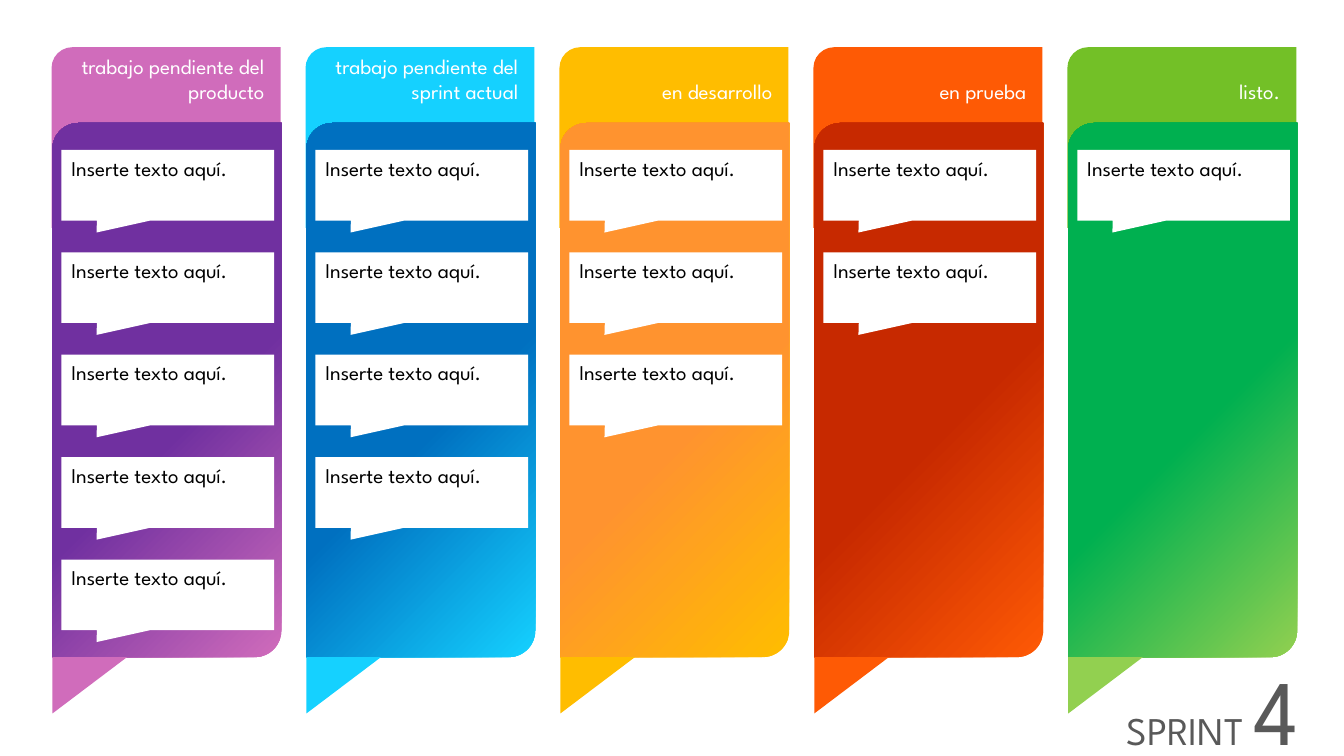
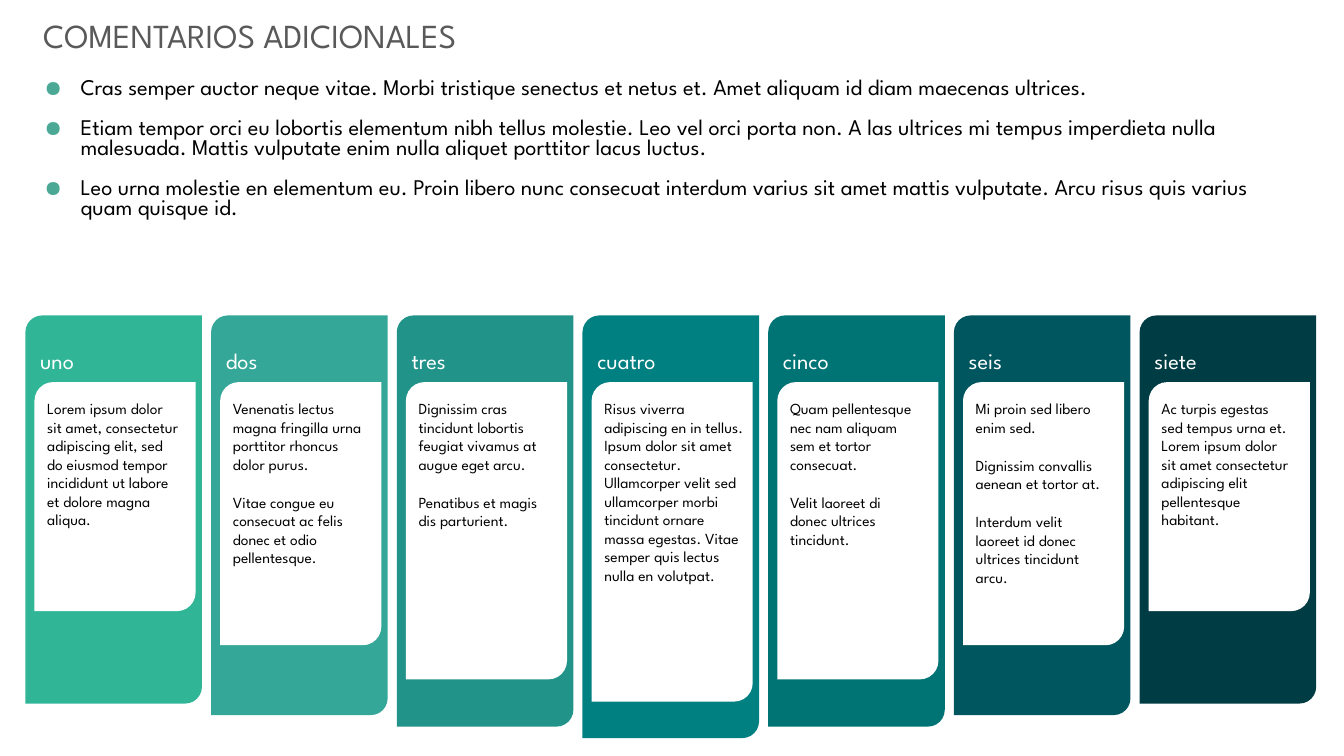
from dataclasses import dataclass

import pptx
import pptx.dml.color
import pptx.enum.shapes
import pptx.enum.text
import pptx.oxml.ns
import pptx.util
from lxml import etree

Cm = pptx.util.Cm
Pt = pptx.util.Pt
RGB = pptx.dml.color.RGBColor.from_string
MSO = pptx.enum.shapes.MSO_SHAPE
ALIGN = pptx.enum.text.PP_ALIGN
ANCHOR = pptx.enum.text.MSO_ANCHOR
qn = pptx.oxml.ns.qn


@dataclass(frozen=True)
class Theme:
    font: str = "League Spartan"
    white: str = "FFFFFF"
    black: str = "000000"
    grey: str = "595959"
    bullet: str = "4BA895"
    teals: tuple = ("30B697", "34A798", "229389", "008081",
                    "007475", "00565E", "003C43")
    note: float = 11
    label: float = 15
    body: float = 16
    title: float = 24
    sprint: float = 28
    number: float = 66
    leading: float = 1.2
    tight: float = 0.9
    para_gap: float = 14


INSETS = (0.25, 0.13, 0.25, 0.13)
HEADER_INSETS = (0.25, 0, 0.25, 0.13)


class Deck:
    def __init__(self, theme):
        self.theme = theme
        self.prs = pptx.Presentation()
        self.prs.slide_width = Cm(33.87)
        self.prs.slide_height = Cm(19.05)
        self.slide = None

    def new_slide(self):
        self.slide = self.prs.slides.add_slide(self.prs.slide_layouts[6])

    def shape(self, kind, box, fill, adj=(), rotation=0):
        """Draw a borderless shape; fill is a colour or (start, end, end position)."""
        sp = self.slide.shapes.add_shape(kind, *map(Cm, box))
        sp.shadow.inherit = False
        sp.line.fill.background()
        sp.rotation = rotation
        for i, value in enumerate(adj):
            sp.adjustments[i] = value
        if isinstance(fill, str):
            sp.fill.solid()
            sp.fill.fore_color.rgb = RGB(fill)
        else:
            start, end, position = fill
            sp.fill.gradient()
            sp.fill.gradient_angle = 135
            for stop, colour, pos in zip(sp.fill.gradient_stops, (start, end), (0, position)):
                stop.color.rgb = RGB(colour)
                stop.position = pos
        return sp

    def panel(self, box, fill, corner=0.115):
        return self.shape(MSO.ROUND_2_DIAG_RECTANGLE, box, fill, (corner, 0))

    def textbox(self, box, paragraphs, **style):
        sp = self.slide.shapes.add_textbox(*map(Cm, box))
        self.set_text(sp.text_frame, paragraphs, **style)

    def set_text(self, tf, paragraphs, colour, align=ALIGN.LEFT, anchor=ANCHOR.TOP,
                 insets=INSETS, gap=0, leading=None, blank_lines=0):
        """Fill a frame; each paragraph is a list of (text, size) runs.

        blank_lines lowers the first line by that many lines.
        """
        leading = leading or self.theme.leading
        tf.word_wrap = True
        tf.vertical_anchor = anchor
        left, top, right, bottom = map(Cm, insets)
        tf.margin_left, tf.margin_right, tf.margin_bottom = left, right, bottom
        tf.margin_top = top + Pt(blank_lines * paragraphs[0][0][1] * leading)
        for i, runs in enumerate(paragraphs):
            p = tf.paragraphs[0] if i == 0 else tf.add_paragraph()
            self.set_paragraph(p, runs, colour, align, gap, leading)

    def set_paragraph(self, p, runs, colour, align, gap, leading):
        p.alignment = align
        p.line_spacing = Pt(max(size for _, size in runs) * leading)
        p.space_after = Pt(gap)
        for text, size in runs:
            r = p.add_run()
            r.text = text
            r.font.name = self.theme.font
            r.font.size = Pt(size)
            r.font.color.rgb = RGB(colour)

    def bullet(self, p):
        pPr = p._p.get_or_add_pPr()
        pPr.set("marL", str(Cm(1.27)))
        pPr.set("indent", str(Cm(-0.91)))
        colour = etree.SubElement(pPr, qn("a:buClr"))
        etree.SubElement(colour, qn("a:srgbClr")).set("val", self.theme.bullet)
        etree.SubElement(pPr, qn("a:buChar")).set("char", "●")

    def bullet_table(self, box, items):
        """Add a one-cell table holding a bulleted list."""
        t = self.theme
        table = self.slide.shapes.add_table(1, 1, *map(Cm, box)).table
        table.first_row = table.horz_banding = False
        cell = table.cell(0, 0)
        cell.fill.background()
        cell.margin_left = cell.margin_right = Cm(0.76)
        cell.margin_top = cell.margin_bottom = Cm(0.51)
        tf = cell.text_frame
        for i, item in enumerate(items):
            p = tf.paragraphs[0] if i == 0 else tf.add_paragraph()
            self.set_paragraph(p, [(item, t.body)], t.black, ALIGN.LEFT, t.para_gap, t.tight)
            self.bullet(p)

    def callout(self, left, top):
        sp = self.shape(MSO.RECTANGULAR_CALLOUT, (left, top, 5.36, 1.78),
                        self.theme.white, (-0.335, 0.669))
        self.set_text(sp.text_frame, [[("Inserte texto aquí.", self.theme.label)]],
                      self.theme.black)

    def board_column(self, left, header, blank_lines, colours, cards):
        t = self.theme
        head, tail, body = colours
        sp = self.panel((left, 1.19, 5.77, 4.55), head)
        self.set_text(sp.text_frame, [[(header, t.label)]], t.white, ALIGN.RIGHT,
                      insets=HEADER_INSETS, blank_lines=blank_lines)
        self.panel((left + 0.02, 3.1, 5.77, 13.46), (tail, body, 0.43))
        self.shape(MSO.RIGHT_TRIANGLE, (left + 0.25, 16.33, 1.42, 1.88), tail, rotation=90)
        for row in range(cards):
            self.callout(left + 0.25, 3.78 + 2.58 * row)

    def comment_column(self, left, name, fill, height, card_height, text_width, paragraphs):
        t = self.theme
        sp = self.panel((left, 7.95, 4.45, height), fill, 0.095)
        self.set_text(sp.text_frame, [[(name, t.body)]], t.white,
                      insets=HEADER_INSETS, blank_lines=1)
        self.panel((left + 0.23, 9.63, 4.06, card_height), t.white)
        self.textbox((left + 0.3, 9.93, text_width, card_height - 0.3),
                     [[(text, t.note)] for text in paragraphs], colour=t.black, gap=t.para_gap)


# header, blank lines above it, (header, tail and body colours), cards
BOARD = [
    ("trabajo pendiente del producto", 0, ("D06CBB", "D06CBB", "7030A0"), 5),
    ("trabajo pendiente del sprint actual", 0, ("15D1FF", "15D1FF", "0070C0"), 4),
    ("en desarrollo", 1, ("FFBD00", "FFBD00", "FF932F"), 3),
    ("en prueba", 1, ("FE5A05", "FE5A05", "C72900"), 2),
    ("listo.", 1, ("73C027", "92D050", "00B050"), 1),
]

BULLETS = [
    "Cras semper auctor neque vitae. Morbi tristique senectus et netus et. "
    "Amet aliquam id diam maecenas ultrices.",
    "Etiam tempor orci eu lobortis elementum nibh tellus molestie. Leo vel orci porta non. "
    "A las ultrices mi tempus imperdieta nulla malesuada. "
    "Mattis vulputate enim nulla aliquet porttitor lacus luctus.",
    "Leo urna molestie en elementum eu. Proin libero nunc consecuat interdum varius sit amet "
    "mattis vulputate. Arcu risus quis varius quam quisque id.",
]

# name, text width, paragraphs
COMMENTS = [
    ("uno", 3.82, ["Lorem ipsum dolor sit amet, consectetur adipiscing elit, sed do eiusmod "
                   "tempor incididunt ut labore et dolore magna aliqua."]),
    ("dos", 3.96, ["Venenatis lectus magna fringilla urna porttitor rhoncus dolor purus.",
                   "Vitae congue eu consecuat ac felis donec et odio pellentesque."]),
    ("tres", 3.73, ["Dignissim cras tincidunt lobortis feugiat vivamus at augue eget arcu.",
                    "Penatibus et magis dis parturient."]),
    ("cuatro", 4.06, ["Risus viverra adipiscing en in tellus. Ipsum dolor sit amet consectetur. "
                      "Ullamcorper velit sed ullamcorper morbi tincidunt ornare massa egestas. "
                      "Vitae semper quis lectus nulla en volutpat."]),
    ("cinco", 3.82, ["Quam pellentesque nec nam aliquam sem et tortor consecuat.",
                     "Velit laoreet di donec ultrices tincidunt."]),
    ("seis", 3.82, ["Mi proin sed libero enim sed.",
                    "Dignissim convallis aenean et tortor at.",
                    "Interdum velit laoreet id donec ultrices tincidunt arcu."]),
    ("siete", 3.82, ["Ac turpis egestas sed tempus urna et. Lorem ipsum dolor sit amet "
                     "consectetur adipiscing elit pellentesque habitant."]),
]
CARD_HEIGHTS = (5.77, 6.63, 7.49, 8.05)


def build_board(deck):
    t = deck.theme
    deck.new_slide()
    for i, column in enumerate(BOARD):
        deck.board_column(1.3 + 6.4 * i, *column)
    deck.textbox((27.61, 16.66, 5.36, 2.39), [[("SPRINT ", t.sprint), ("4", t.number)]],
                 colour=t.grey, align=ALIGN.RIGHT, anchor=ANCHOR.MIDDLE)


def build_comments(deck):
    t = deck.theme
    deck.new_slide()
    middle = len(COMMENTS) // 2
    for i, ((name, width, paragraphs), fill) in enumerate(zip(COMMENTS, t.teals)):
        level = middle - abs(i - middle)
        deck.comment_column(0.64 + 4.68 * i, name, fill, 9.78 + 0.29 * level,
                            CARD_HEIGHTS[level], width, paragraphs)
    deck.bullet_table((0, 1.52, 33.25, 5.38), BULLETS)
    deck.textbox((0.84, 0.25, 18.8, 1.27), [[("COMENTARIOS ADICIONALES", t.title)]],
                 colour=t.grey)


def main():
    deck = Deck(Theme())
    build_board(deck)
    build_comments(deck)
    deck.prs.save("out.pptx")


if __name__ == "__main__":
    main()
